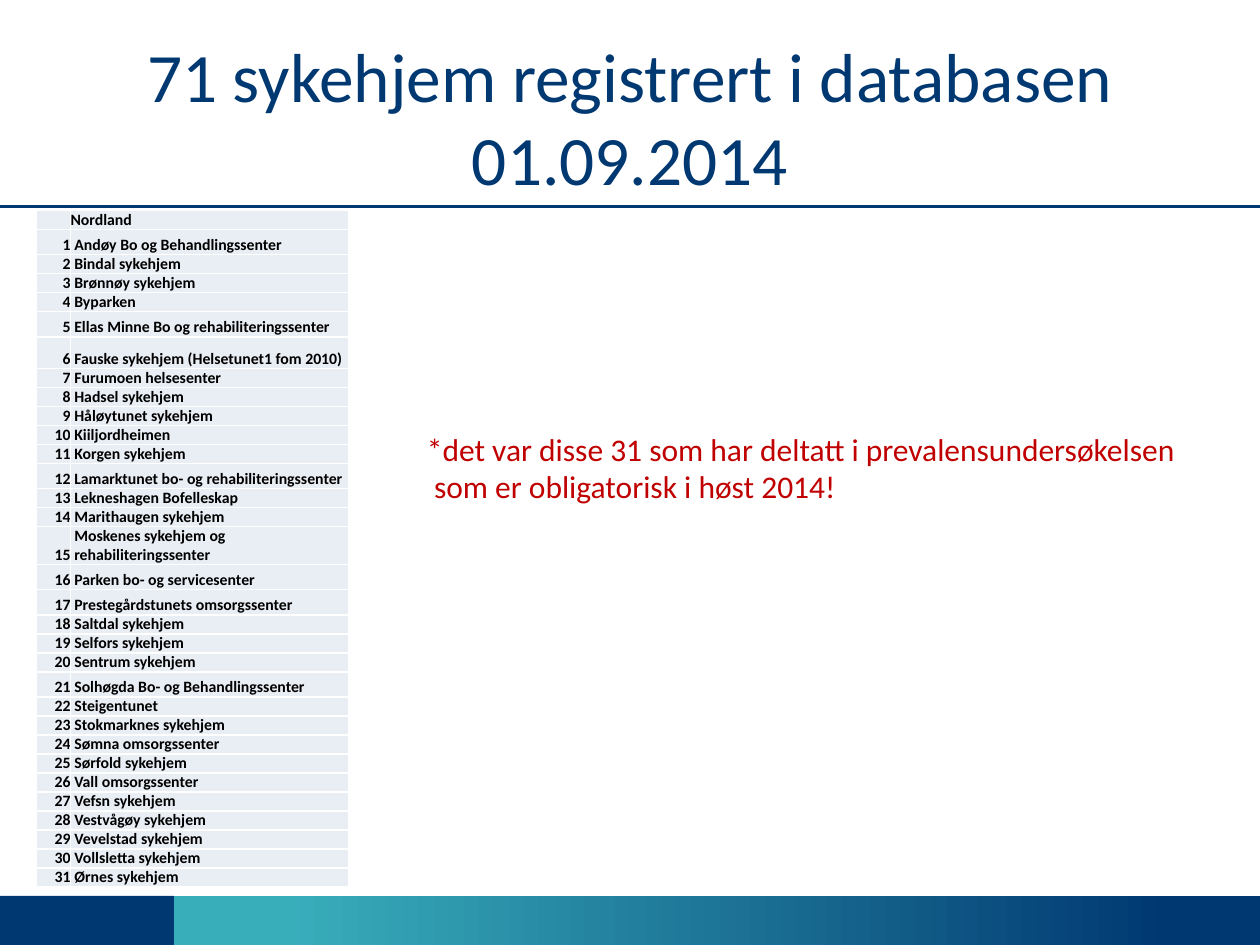
from pptx import Presentation
from pptx.dml.color import RGBColor
from pptx.enum.shapes import MSO_CONNECTOR, MSO_SHAPE
from pptx.enum.text import MSO_ANCHOR, MSO_AUTO_SIZE, PP_ALIGN
from pptx.oxml.ns import qn
from pptx.util import Inches, Pt
from lxml import etree

RECT, STRAIGHT = MSO_SHAPE.RECTANGLE, MSO_CONNECTOR.STRAIGHT
MIDDLE, BOTTOM = MSO_ANCHOR.MIDDLE, MSO_ANCHOR.BOTTOM
LEFT, CENTER, RIGHT = PP_ALIGN.LEFT, PP_ALIGN.CENTER, PP_ALIGN.RIGHT

THEME = {
    "font": "Calibri",
    "navy": "003871", "teal": "39AEBB", "red": "C00000",
    "black": "000000", "white": "FFFFFF", "cell": "E9EDF4",
    "title_pt": 39.6, "note_pt": 18, "table_pt": 9,
}

# Content
TITLE = "71 sykehjem registrert i databasen 01.09.2014"
NOTE = ("*det var disse 31 som har deltatt i prevalensundersøkelsen\v"
        " som er obligatorisk i høst 2014!")
COUNTY = "Nordland"
NURSING_HOMES = [
    "Andøy Bo og Behandlingssenter", "Bindal sykehjem", "Brønnøy sykehjem",
    "Byparken", "Ellas Minne Bo og rehabiliteringssenter",
    "Fauske sykehjem (Helsetunet1 fom 2010)", "Furumoen helsesenter",
    "Hadsel sykehjem", "Håløytunet sykehjem", "Kiiljordheimen",
    "Korgen sykehjem", "Lamarktunet bo- og rehabiliteringssenter",
    "Lekneshagen Bofelleskap", "Marithaugen sykehjem",
    "Moskenes sykehjem og rehabiliteringssenter",
    "Parken bo- og servicesenter", "Prestegårdstunets omsorgssenter",
    "Saltdal sykehjem", "Selfors sykehjem", "Sentrum sykehjem",
    "Solhøgda Bo- og Behandlingssenter", "Steigentunet",
    "Stokmarknes sykehjem", "Sømna omsorgssenter", "Sørfold sykehjem",
    "Vall omsorgssenter", "Vefsn sykehjem", "Vestvågøy sykehjem",
    "Vevelstad sykehjem", "Vollsletta sykehjem", "Ørnes sykehjem",
]

# Layout
SLIDE_W, SLIDE_H = 10, 7.5
FOOTER_H, FOOTER_SPLIT = 0.39, 1.38
RULE_Y = 1.64
TABLE_X, TABLE_Y, TABLE_H = 0.29, 1.67, 5.44
COL_WIDTHS = [0.27, 2.21]
ROW_H = 0.13
TALL_ROWS = {1: 0.2, 5: 0.2, 6: 0.25, 12: 0.2, 13: 0.15, 15: 0.26,
             16: 0.2, 17: 0.2, 21: 0.2, 24: 0.15, 26: 0.15}


def rgb(name):
    return RGBColor.from_string(THEME[name])


def write(tf, text, *, size, color, bold=False, align=LEFT):
    p = tf.paragraphs[0]
    p.alignment = align
    p.text = text
    for r in p.runs:
        r.font.name = THEME["font"]
        r.font.size = Pt(size)
        r.font.bold = bold
        r.font.color.rgb = rgb(color)
    if not text:  # keeps an empty cell as low as its row
        etree.SubElement(p._p, qn("a:endParaRPr"), sz=str(int(size * 100)))


def add_text(s, box, text, *, wrap=True, anchor=None, **fmt):
    tf = s.shapes.add_textbox(*map(Inches, box)).text_frame
    tf.word_wrap = wrap
    if anchor is not None:
        tf.vertical_anchor = anchor
    write(tf, text, **fmt)
    return tf


def add_band(s, left, right):
    sp = s.shapes.add_shape(RECT, Inches(left), Inches(SLIDE_H - FOOTER_H),
                            Inches(right - left), Inches(FOOTER_H))
    sp.shadow.inherit = False
    sp.line.fill.background()
    return sp


def add_borders(cell):
    tcPr = cell._tc.get_or_add_tcPr()
    for i, side in enumerate(("lnL", "lnR", "lnT", "lnB")):
        ln = etree.Element(qn(f"a:{side}"), w=str(Pt(1)))
        fill = etree.SubElement(ln, qn("a:solidFill"))
        etree.SubElement(fill, qn("a:srgbClr"), val=THEME["white"])
        tcPr.insert(i, ln)


def add_home_table(s):
    rows = [("", COUNTY)]
    rows += [(str(n), home) for n, home in enumerate(NURSING_HOMES, 1)]
    table = s.shapes.add_table(
        len(rows), len(COL_WIDTHS), Inches(TABLE_X), Inches(TABLE_Y),
        Inches(sum(COL_WIDTHS)), Inches(TABLE_H)).table
    table.first_row = table.horz_banding = False
    for col, width in zip(table.columns, COL_WIDTHS):
        col.width = Inches(width)
    for i, row in enumerate(rows):
        table.rows[i].height = Inches(TALL_ROWS.get(i, ROW_H))
        for j, text in enumerate(row):
            cell = table.cell(i, j)
            cell.margin_right = cell.margin_top = cell.margin_bottom = 0
            cell.margin_left = Inches(0.03 if i and j else 0)
            cell.vertical_anchor = BOTTOM
            cell.fill.solid()
            cell.fill.fore_color.rgb = rgb("cell")
            add_borders(cell)
            write(cell.text_frame, text, size=THEME["table_pt"],
                  color="black", bold=True, align=LEFT if j else RIGHT)


def main():
    prs = Presentation()
    prs.slide_width, prs.slide_height = Inches(SLIDE_W), Inches(SLIDE_H)
    s = prs.slides.add_slide(prs.slide_layouts[6])

    # Footer bands
    fill = add_band(s, FOOTER_SPLIT, SLIDE_W).fill
    fill.gradient()
    fill.gradient_angle = 0
    for stop, (pos, color) in zip(fill.gradient_stops,
                                  [(0.1, "teal"), (0.92, "navy")]):
        stop.position = pos
        stop.color.rgb = rgb(color)
    fill = add_band(s, 0, FOOTER_SPLIT).fill
    fill.solid()
    fill.fore_color.rgb = rgb("navy")

    # Rule under the title
    rule = s.shapes.add_connector(STRAIGHT, 0, Inches(RULE_Y),
                                  Inches(SLIDE_W), Inches(RULE_Y))
    rule.line.color.rgb = rgb("navy")
    rule.line.width = Pt(2)
    etree.SubElement(rule._element.spPr, qn("a:effectLst"))

    # Title, note and table
    add_text(s, (0.5, 0.3, 9, 1.25), TITLE, anchor=MIDDLE, align=CENTER,
             size=THEME["title_pt"], color="navy")
    note = add_text(s, (3.29, 3.36, 6.16, 0.71), NOTE, wrap=False,
                    size=THEME["note_pt"], color="red")
    note.auto_size = MSO_AUTO_SIZE.SHAPE_TO_FIT_TEXT
    add_home_table(s)

    prs.save("out.pptx")


if __name__ == "__main__":
    main()
